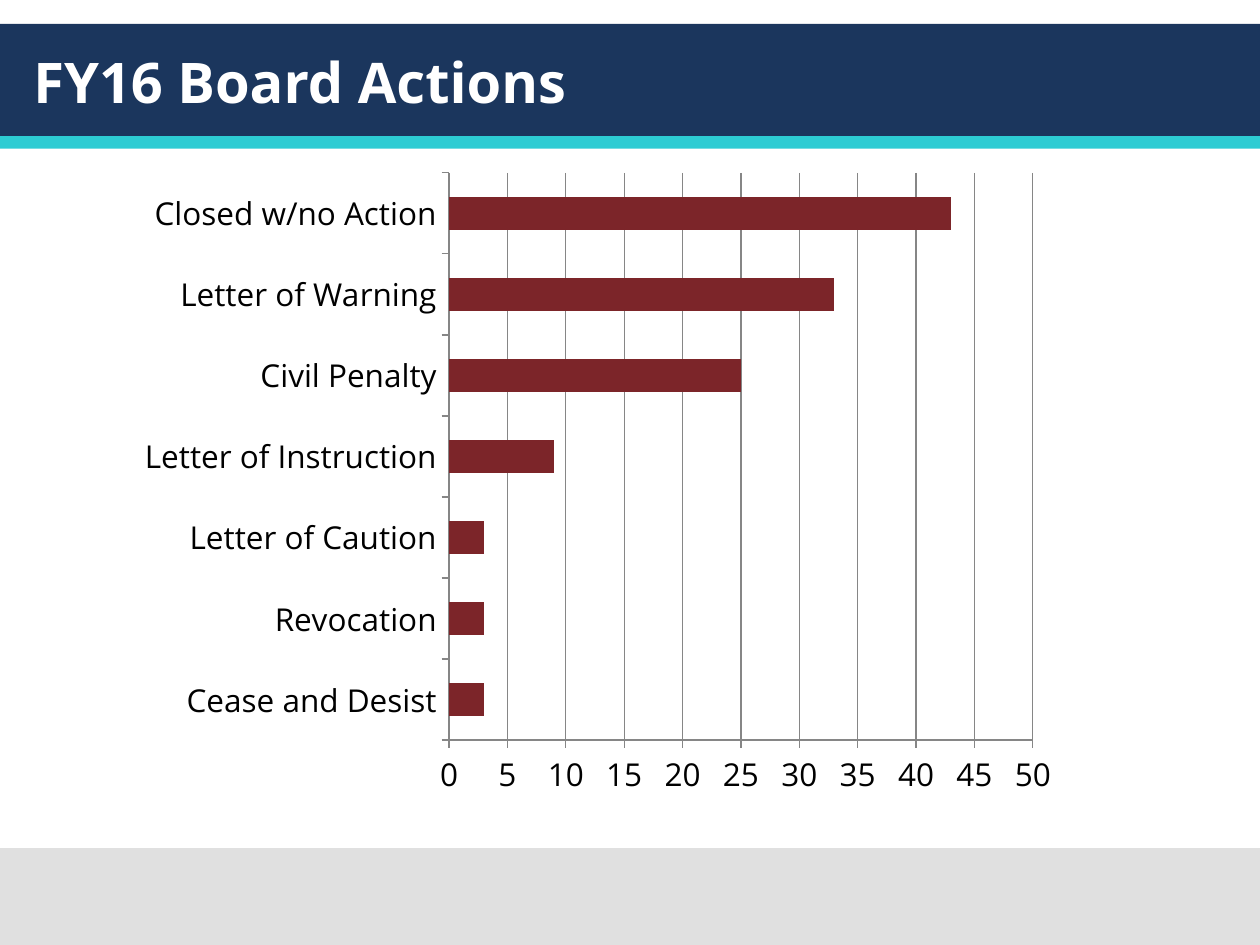
from pptx import Presentation
from pptx.chart.data import CategoryChartData
from pptx.dml.color import RGBColor
from pptx.enum.chart import XL_CHART_TYPE, XL_TICK_MARK
from pptx.enum.shapes import MSO_SHAPE
from pptx.enum.text import MSO_ANCHOR
from pptx.util import Pt

RECT = MSO_SHAPE.RECTANGLE
MIDDLE = MSO_ANCHOR.MIDDLE
BAR_STACKED = XL_CHART_TYPE.BAR_STACKED
TICK_OUT = XL_TICK_MARK.OUTSIDE
TICK_NONE = XL_TICK_MARK.NONE

FONT = "Open Sans"
COLORS = {
    "navy": "1B365D",
    "teal": "2DCCD3",
    "footer": "E0E0E0",
    "bar": "7C2529",
    "axis": "868686",
    "text": "000000",
    "title": "FFFFFF",
}
ACTIONS = {
    "Cease and Desist": 3,
    "Revocation": 3,
    "Letter of Caution": 3,
    "Letter of Instruction": 9,
    "Civil Penalty": 25,
    "Letter of Warning": 33,
    "Closed w/no Action": 43,
}


def rgb(name):
    return RGBColor.from_string(COLORS[name])


def add_band(slide, x, y, w, h, color):
    sp = slide.shapes.add_shape(RECT, Pt(x), Pt(y), Pt(w), Pt(h))
    sp.shadow.inherit = False
    sp.fill.solid()
    sp.fill.fore_color.rgb = rgb(color)
    sp.line.fill.background()


def add_text(slide, text, x, y, w, h, size=18, color="text", bold=False):
    tf = slide.shapes.add_textbox(Pt(x), Pt(y), Pt(w), Pt(h)).text_frame
    tf.word_wrap = True
    tf.vertical_anchor = MIDDLE
    r = tf.paragraphs[0].add_run()
    r.text = text
    r.font.name = FONT
    r.font.size = Pt(size)
    r.font.bold = bold
    r.font.color.rgb = rgb(color)


def add_header(slide, x, y, w, h, title):
    stripe_h = 7.2
    band_h = h - stripe_h
    margin = 12
    add_band(slide, x, y, w, band_h, "navy")
    add_band(slide, x, y + band_h, w, stripe_h, "teal")
    add_text(slide, title, x + margin, y, w - 2 * margin, band_h + 0.7,
             size=32, color="title", bold=True)


def add_actions_chart(slide, x, y, w, h):
    data = CategoryChartData()
    data.categories = list(ACTIONS)
    data.add_series("Series 1", list(ACTIONS.values()))
    chart = slide.shapes.add_chart(
        BAR_STACKED, Pt(x), Pt(y), Pt(w), Pt(h), data).chart
    chart.has_legend = False
    chart.has_title = False
    chart.font.name = FONT
    chart.font.size = Pt(18)
    chart.font.color.rgb = rgb("text")

    plot = chart.plots[0]
    plot.gap_width = 150
    plot.overlap = 100
    plot.vary_by_categories = False
    fill = plot.series[0].format.fill
    fill.solid()
    fill.fore_color.rgb = rgb("bar")

    value_axis = chart.value_axis
    value_axis.minimum_scale = 0
    value_axis.maximum_scale = 50
    value_axis.major_unit = 5
    value_axis.has_major_gridlines = True
    for axis in (chart.category_axis, value_axis):
        axis.major_tick_mark = TICK_OUT
        axis.minor_tick_mark = TICK_NONE
    for part in (chart.category_axis, value_axis, value_axis.major_gridlines):
        part.format.line.color.rgb = rgb("axis")
        part.format.line.width = Pt(0.75)


def main():
    prs = Presentation()
    prs.slide_width = Pt(720)
    prs.slide_height = Pt(540)
    slide = prs.slides.add_slide(prs.slide_layouts[6])
    add_header(slide, 0, 13.7, 720, 71.3, "FY16 Board Actions")
    add_band(slide, 0, 484.6, 720, 55.4, "footer")
    add_actions_chart(slide, 72, 91.4, 539.3, 370.8)
    prs.save("out.pptx")


if __name__ == "__main__":
    main()
